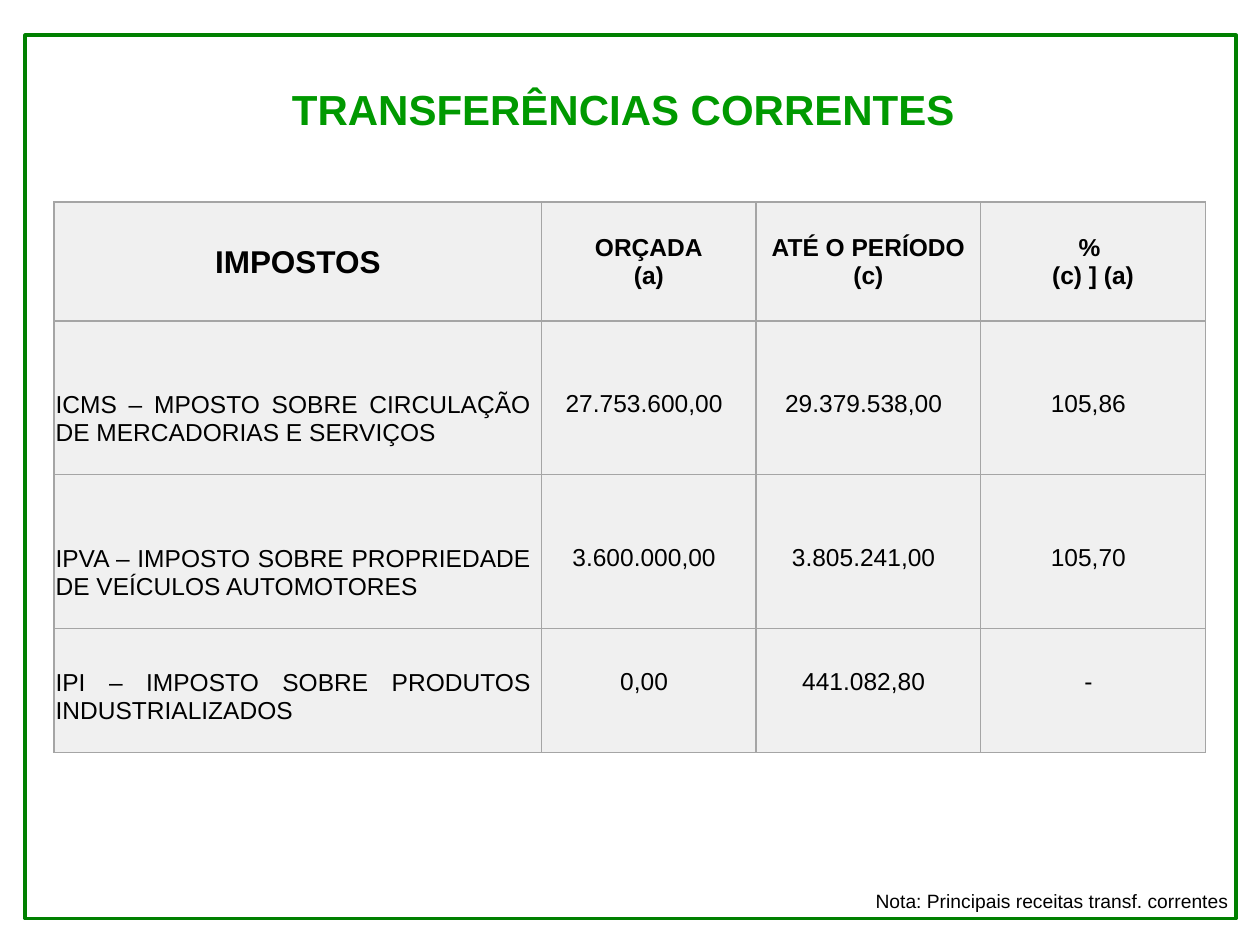
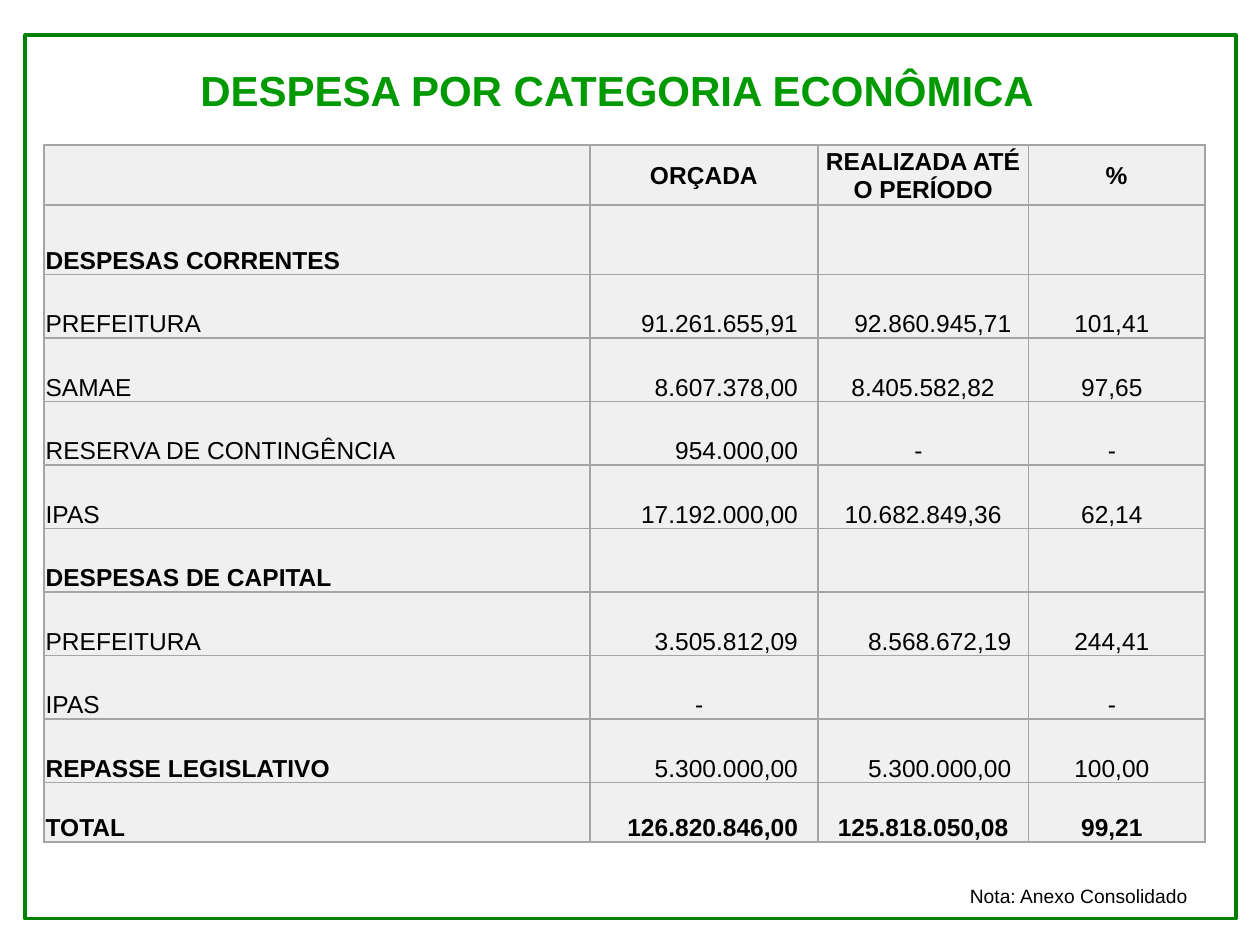
from dataclasses import dataclass, replace
from typing import Callable

from lxml.etree import SubElement
from pptx import Presentation
from pptx.dml.color import RGBColor
from pptx.enum.shapes import MSO_SHAPE
from pptx.enum.text import MSO_ANCHOR, PP_ALIGN
from pptx.oxml.ns import qn
from pptx.util import Cm, Pt

COLORS = {
    "title": "009900",
    "frame": "008000",
    "cell": "F0F0F0",
    "border": "A5A5A5",
    "text": "000000",
}
FONT = "Arial"


@dataclass(frozen=True)
class TextStyle:
    size: float = 14
    bold: bool = False
    color: str = "text"
    align: PP_ALIGN = PP_ALIGN.CENTER
    anchor: MSO_ANCHOR = MSO_ANCHOR.BOTTOM
    # Right and bottom insets in centimetres, used inside cells
    right: float = 0.22
    bottom: float = 0


@dataclass(frozen=True)
class Box:
    left: float
    top: float
    width: float
    height: float
    text: str = ""


@dataclass(frozen=True)
class BudgetTable:
    left: float
    top: float
    columns: list[float]
    rows: list[float]
    texts: list[tuple[str, ...]]
    style_of: Callable[[int, int, str], TextStyle]


@dataclass(frozen=True)
class BudgetPage:
    title: Box
    table: BudgetTable
    note: Box


# Shared styles
TITLE = TextStyle(24, True, "title", anchor=MSO_ANCHOR.MIDDLE)
NOTE = TextStyle(11, align=PP_ALIGN.LEFT, anchor=MSO_ANCHOR.TOP)
HEADER = TextStyle(bold=True, anchor=MSO_ANCHOR.MIDDLE, right=0.03)
LABEL = TextStyle(align=PP_ALIGN.JUSTIFY)
VALUE = TextStyle()
FRAME = Box(0.51, 0.71, 24.41, 17.81)
LINE_HEIGHT = 0.57


def rgb(name: str) -> RGBColor:
    return RGBColor.from_string(COLORS[name])


def format_text(frame, text: str, style: TextStyle) -> None:
    frame.text = text
    for para in frame.paragraphs:
        para.alignment = style.align
        for span in para.runs:
            span.font.name = FONT
            span.font.size = Pt(style.size)
            span.font.bold = style.bold
            span.font.color.rgb = rgb(style.color)


def place(box: Box) -> list:
    return [Cm(value) for value in (box.left, box.top, box.width, box.height)]


def add_text(page, box: Box, style: TextStyle) -> None:
    frame = page.shapes.add_textbox(*place(box)).text_frame
    frame.word_wrap = True
    frame.vertical_anchor = style.anchor
    format_text(frame, box.text, style)


def add_frame(page) -> None:
    frame = page.shapes.add_shape(MSO_SHAPE.RECTANGLE, *place(FRAME))
    frame.shadow.inherit = False
    frame.fill.background()
    frame.line.color.rgb = rgb("frame")
    frame.line.width = Pt(2)


def add_borders(cell) -> None:
    properties = cell._tc.get_or_add_tcPr()
    for side in ("a:lnL", "a:lnR", "a:lnT", "a:lnB"):
        line = SubElement(properties, qn(side), w=str(Pt(1)))
        fill = SubElement(line, qn("a:solidFill"))
        SubElement(fill, qn("a:srgbClr"), val=COLORS["border"])


def add_budget_table(page, spec: BudgetTable) -> None:
    box = Box(spec.left, spec.top, sum(spec.columns), sum(spec.rows))
    table = page.shapes.add_table(
        len(spec.rows), len(spec.columns), *place(box)
    ).table
    table.first_row = table.horz_banding = False
    for column, width in zip(table.columns, spec.columns):
        column.width = Cm(width)
    for row, height in zip(table.rows, spec.rows):
        row.height = Cm(height)

    for row, texts in enumerate(spec.texts):
        for column, text in enumerate(texts):
            cell = table.cell(row, column)
            add_borders(cell)
            cell.fill.solid()
            cell.fill.fore_color.rgb = rgb("cell")
            if not text:
                continue
            style = spec.style_of(row, column, text)
            cell.vertical_anchor = style.anchor
            cell.margin_left = cell.margin_top = Cm(0.03)
            cell.margin_right = Cm(style.right)
            cell.margin_bottom = Cm(style.bottom)
            format_text(cell.text_frame, text, style)


def transfer_style(row: int, column: int, text: str) -> TextStyle:
    if row == 0:
        return replace(HEADER, size=18) if column == 0 else HEADER
    # Values line up with the first line of the two-line labels
    if column == 0:
        return replace(LABEL, bottom=LINE_HEIGHT)
    return replace(VALUE, bottom=2 * LINE_HEIGHT)


def expense_style(row: int, column: int, text: str) -> TextStyle:
    if row == 0:
        return HEADER
    total = row == len(EXPENSES) - 1
    if column == 0:
        heading = text.startswith(("DESPESAS", "REPASSE"))
        return replace(LABEL, bold=total or heading)
    style = replace(VALUE, bold=total)
    if column == 3 or text == "-":
        return style
    if column == 2 and text in CENTERED_AMOUNTS:
        return replace(style, right=0.03)
    return replace(style, align=PP_ALIGN.RIGHT, right=0.4 if column == 1 else 0.34)


# Table contents
TRANSFERS = [
    ("IMPOSTOS", "ORÇADA\n(a)", "ATÉ O PERÍODO (c)", "% \n(c) ] (a)"),
    ("ICMS – MPOSTO SOBRE CIRCULAÇÃO DE MERCADORIAS E SERVIÇOS",
     "27.753.600,00", "29.379.538,00", "105,86"),
    ("IPVA – IMPOSTO SOBRE PROPRIEDADE DE VEÍCULOS AUTOMOTORES",
     "3.600.000,00", "3.805.241,00", "105,70"),
    ("IPI – IMPOSTO SOBRE PRODUTOS INDUSTRIALIZADOS",
     "0,00", "441.082,80", "-"),
]
EXPENSES = [
    ("", "ORÇADA", "REALIZADA ATÉ O PERÍODO", "%"),
    ("DESPESAS CORRENTES", "", "", ""),
    ("PREFEITURA", "91.261.655,91", "92.860.945,71", "101,41"),
    ("SAMAE", "8.607.378,00", "8.405.582,82", "97,65"),
    ("RESERVA DE CONTINGÊNCIA", "954.000,00", "-", "-"),
    ("IPAS", "17.192.000,00", "10.682.849,36", "62,14"),
    ("DESPESAS DE CAPITAL", "", "", ""),
    ("PREFEITURA", "3.505.812,09", "8.568.672,19", "244,41"),
    ("IPAS", "-", "", "-"),
    ("REPASSE LEGISLATIVO", "5.300.000,00", "5.300.000,00", "100,00"),
    ("TOTAL", "126.820.846,00", "125.818.050,08", "99,21"),
]
CENTERED_AMOUNTS = {"8.405.582,82", "10.682.849,36", "125.818.050,08"}

PAGES = [
    BudgetPage(
        Box(5.3, 1.55, 14.53, 1.27, "TRANSFERÊNCIAS CORRENTES"),
        BudgetTable(1.09, 4.07, [9.83, 4.32, 4.53, 4.53],
                    [2.4, 3.1, 3.1, 2.5], TRANSFERS, transfer_style),
        Box(17.4, 17.81, 8, 0.74, "Nota: Principais receitas transf. correntes"),
    ),
    BudgetPage(
        Box(1.5, 1.17, 21.89, 1.27, "DESPESA POR CATEGORIA ECONÔMICA"),
        BudgetTable(0.89, 2.92, [11, 4.6, 4.24, 3.56],
                    [1.2, 1.4, *[1.28] * 8, 1.2], EXPENSES, expense_style),
        Box(19.3, 17.7, 5.6, 0.74, "Nota: Anexo Consolidado"),
    ),
]


def main() -> None:
    deck = Presentation()
    deck.slide_width, deck.slide_height = Cm(25.4), Cm(19.05)
    for content in PAGES:
        page = deck.slides.add_slide(deck.slide_layouts[6])
        add_frame(page)
        add_text(page, content.title, TITLE)
        add_budget_table(page, content.table)
        add_text(page, content.note, NOTE)
    deck.save("out.pptx")


if __name__ == "__main__":
    main()
